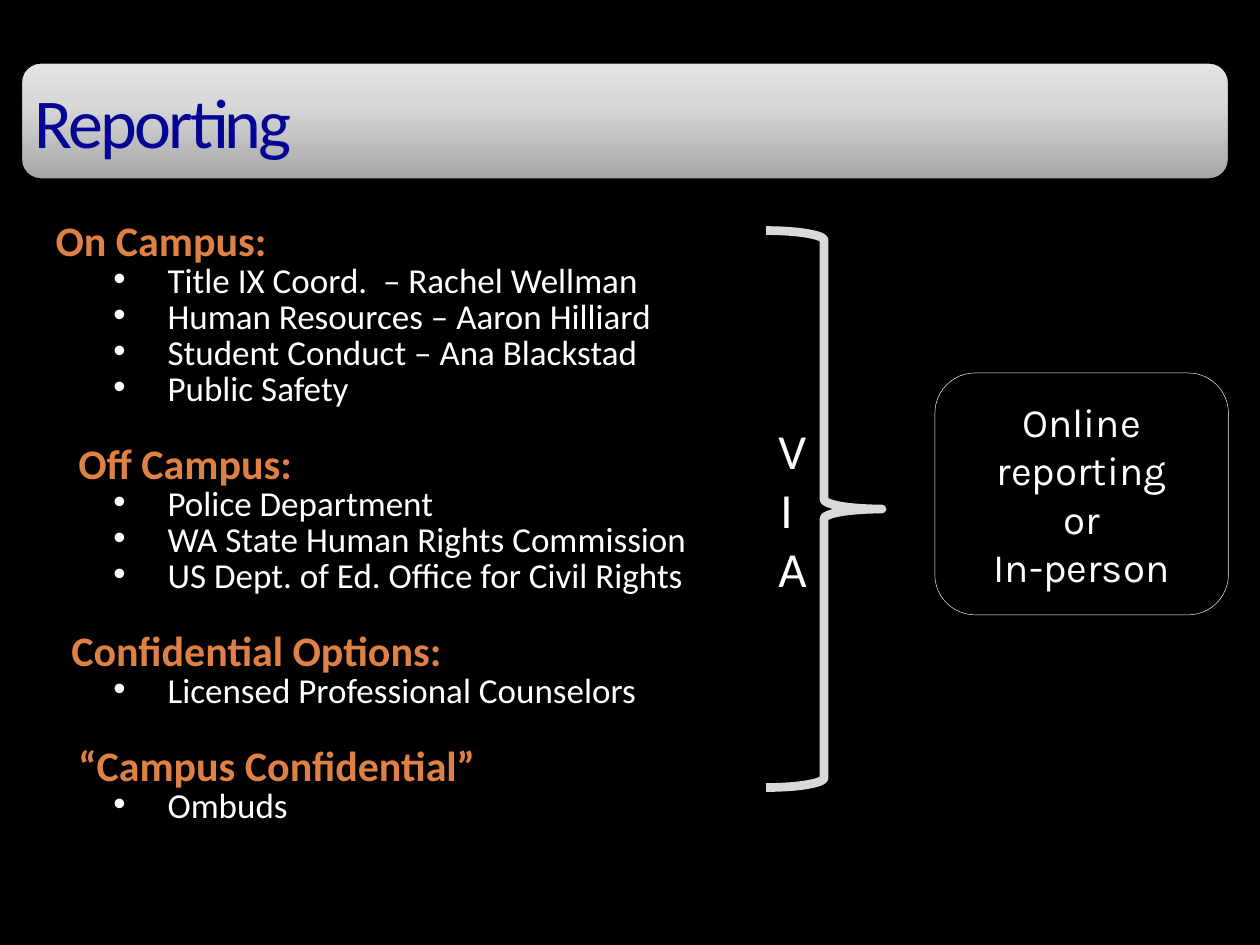
"""Build the Reporting slide with its channels, brace and reporting methods."""
from copy import deepcopy
from dataclasses import dataclass

from lxml import etree
from pptx import Presentation
from pptx import util as u
from pptx.dml.color import RGBColor
from pptx.enum import shapes, text
from pptx.oxml.ns import qn

BLACK = RGBColor(0x00, 0x00, 0x00)
WHITE = RGBColor(0xFF, 0xFF, 0xFF)
NAVY = RGBColor(0x05, 0x05, 0x95)
ORANGE = RGBColor(0xDF, 0x80, 0x45)
BRACE_GREY = RGBColor(0xD9, 0xD9, 0xD9)
BAR_STOPS = (
    (0, RGBColor(0xA7, 0xA7, 0xA7)),
    (0.65, RGBColor(0xD8, 0xD8, 0xD8)),
    (1, RGBColor(0xE4, 0xE4, 0xE4)),
)
BODY_FONT = "Calibri"
METHOD_FONT = "Karla"


@dataclass(frozen=True)
class Frame:
    left: float
    top: float
    width: float
    height: float

    def lengths(self) -> tuple:
        return tuple(u.Pt(n) for n in (self.left, self.top, self.width, self.height))


@dataclass(frozen=True)
class Style:
    font: str
    size: float
    color: RGBColor
    bold: bool = False


@dataclass(frozen=True)
class Group:
    heading: str
    indent: float
    entries: tuple


BAR = Frame(12.24, 36, 689.76, 66.24)
LIST = Frame(23.76, 113, 400, 414.7)
METHODS = Frame(534.24, 213.12, 167.76, 138.24)
BRACE = Frame(437.76, 131.76, 66.24, 318.24)

TITLE = Style(BODY_FONT, 40, NAVY)
HEADING = Style(BODY_FONT, 24, ORANGE, True)
ENTRY = Style(BODY_FONT, 20, WHITE)
METHOD = Style(METHOD_FONT, 23, WHITE)
VIA = Style(BODY_FONT, 28, WHITE)

GROUPS = (
    Group("On Campus:", 8, (
        "Title IX Coord.  – Rachel Wellman",
        "Human Resources – Aaron Hilliard",
        "Student Conduct – Ana Blackstad",
        "Public Safety",
    )),
    Group("Off Campus:", 21, (
        "Police Department",
        "WA State Human Rights Commission",
        "US Dept. of Ed. Office for Civil Rights",
    )),
    Group("Confidential Options:", 17, ("Licensed Professional Counselors",)),
    Group("“Campus Confidential”", 21, ("Ombuds",)),
)


def place(shape, frame: Frame) -> None:
    shape.left, shape.top, shape.width, shape.height = frame.lengths()


def add_span(para, words: str, style: Style):
    span = para.add_run()
    span.text = words
    span.font.name = style.font
    span.font.size = u.Pt(style.size)
    span.font.bold = style.bold
    span.font.color.rgb = style.color
    return span


def add_outline(page, kind, frame: Frame, color: RGBColor, weight: float):
    shape = page.shapes.add_shape(kind, *frame.lengths())
    shape.shadow.inherit = False
    shape.fill.background()
    shape.line.color.rgb = color
    shape.line.width = u.Pt(weight)
    shape.text_frame.vertical_anchor = text.MSO_ANCHOR.MIDDLE
    return shape


def write_centred(shape, lines: tuple, style: Style) -> None:
    box = shape.text_frame
    for number, line in enumerate(lines):
        para = box.add_paragraph() if number else box.paragraphs[0]
        para.alignment = text.PP_ALIGN.CENTER
        add_span(para, line, style)


def set_indent(para, margin: float, first: float, bullet: str = "") -> None:
    properties = para._p.get_or_add_pPr()
    properties.set("marL", str(u.Pt(margin)))
    properties.set("indent", str(u.Pt(first)))
    if bullet:
        etree.SubElement(properties, qn("a:buChar")).set("char", bullet)
    else:
        etree.SubElement(properties, qn("a:buNone"))


def draw_title(page) -> None:
    bar = add_outline(page, shapes.MSO_SHAPE.ROUNDED_RECTANGLE, BAR, BLACK, 0.75)
    bar.fill.gradient()
    bar.fill.gradient_angle = 90
    stop_list = bar._element.spPr.find(qn("a:gradFill")).find(qn("a:gsLst"))
    stop_list.append(deepcopy(stop_list[-1]))
    for stop, (position, color) in zip(bar.fill.gradient_stops, BAR_STOPS):
        stop.position = position
        stop.color.rgb = color
    page.shapes._spTree.insert(2, bar._element)

    title = page.shapes.title
    place(title, BAR)
    box = title.text_frame
    box.auto_size = text.MSO_AUTO_SIZE.NONE
    box.vertical_anchor = text.MSO_ANCHOR.MIDDLE
    para = box.paragraphs[0]
    para.alignment = text.PP_ALIGN.LEFT
    span = add_span(para, "Reporting", TITLE)
    span.font._element.set("spc", "-150")


def draw_list(page) -> None:
    body = page.placeholders[1]
    place(body, LIST)
    box = body.text_frame
    box.auto_size = text.MSO_AUTO_SIZE.NONE
    box.margin_left = box.margin_right = box.margin_bottom = 0
    box.margin_top = u.Pt(17.5)
    for number, group in enumerate(GROUPS):
        para = box.add_paragraph() if number else box.paragraphs[0]
        set_indent(para, group.indent, 0)
        para.line_spacing = 0.7
        para.space_before = u.Pt(25 if number else 0)
        add_span(para, group.heading, HEADING)
        for entry in group.entries:
            para = box.add_paragraph()
            para.level = 1
            set_indent(para, 72, -31, "•")
            para.line_spacing = 0.7
            para.space_before = u.Pt(3.75)
            add_span(para, entry, ENTRY)


def main() -> None:
    deck = Presentation()
    deck.slide_width, deck.slide_height = u.Pt(720), u.Pt(540)
    page = deck.slides.add_slide(deck.slide_layouts[1])
    page.background.fill.solid()
    page.background.fill.fore_color.rgb = BLACK

    draw_title(page)
    draw_list(page)
    methods = add_outline(page, shapes.MSO_SHAPE.ROUNDED_RECTANGLE, METHODS, WHITE, 0.25)
    write_centred(methods, ("Online reporting", "or", "In-person"), METHOD)
    brace = add_outline(page, shapes.MSO_SHAPE.RIGHT_BRACE, BRACE, BRACE_GREY, 5)
    brace.text_frame._txBody.bodyPr.set("vert", "wordArtVert")
    write_centred(brace, ("VIA",), VIA)
    deck.save("out.pptx")


if __name__ == "__main__":
    main()
